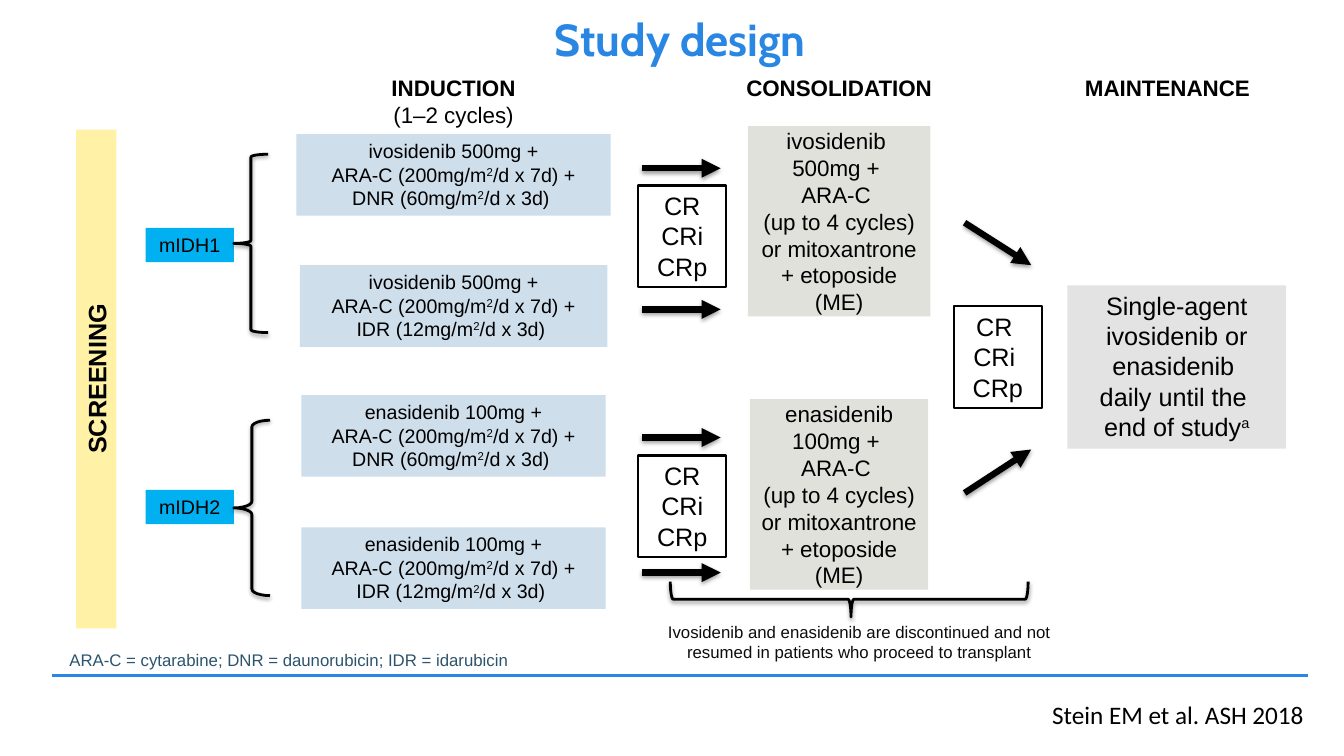
"""Build the study design flow slide."""
from lxml import etree
from pptx import Presentation
from pptx.dml.color import RGBColor
from pptx.enum.shapes import MSO_CONNECTOR, MSO_SHAPE
from pptx.enum.text import MSO_ANCHOR, MSO_AUTO_SIZE, PP_ALIGN
from pptx.oxml import parse_xml
from pptx.oxml.ns import nsdecls, qn
from pptx.util import Pt

RECTANGLE, BRACE = MSO_SHAPE.RECTANGLE, MSO_SHAPE.LEFT_BRACE
STRAIGHT = MSO_CONNECTOR.STRAIGHT
TOP, MIDDLE = MSO_ANCHOR.TOP, MSO_ANCHOR.MIDDLE
LEFT, CENTER = PP_ALIGN.LEFT, PP_ALIGN.CENTER
NO_AUTOFIT = MSO_AUTO_SIZE.NONE

THEME = {
    "blue": "2986E2", "black": "000000", "note": "0D0D0D", "slate": "2C546E",
    "induction": "CEDEEB", "consolidation": "E1E1DB", "maintenance": "E3E3E3",
    "screening": "FFF1A6", "mutation": "00B0F0",
    "title_size": 32, "large": 18, "heading_size": 16, "regimen_size": 14, "small": 12,
    "title_font": "Cabin", "body_font": "Arial", "citation_font": "Calibri",
}

TITLE = "Study design"
HEADINGS = [
    (324, 185, ["INDUCTION", "(1–2 cycles)"]),
    (599.4, 147.6, ["CONSOLIDATION"]),
    (834, 156.2, ["MAINTENANCE"]),
]
ARA_C = "ARA-C (200mg/m^2^/d x 7d) +"
DNR = "DNR (60mg/m^2^/d x 3d) "
IDR = "IDR (12mg/m^2^/d x 3d) "
INDUCTION = [
    (95.8, 224.6, ["ivosidenib 500mg +", ARA_C, DNR]),
    (189.4, 219.6, ["ivosidenib 500mg +", ARA_C, IDR]),
    (282.2, 217.4, ["enasidenib 100mg +", ARA_C, DNR]),
    (376.6, 217.4, ["enasidenib 100mg +", ARA_C, IDR]),
]
CONSOLIDATION = [
    (90, 130.3, ["ivosidenib ", "500mg + ", "ARA-C ", "(up to 4 cycles)",
                 "or mitoxantrone + etoposide (ME)"]),
    (285.1, 127.4, ["enasidenib 100mg + ", "ARA-C ",
                    "(up to 4 cycles) or mitoxantrone + etoposide (ME)"]),
]
MAINTENANCE = ["Single-agent ivosidenib or enasidenib ", "daily until the ", "end of study^a^"]
RESPONSES = [
    (455.8, 132.5, ["CR CRi CRp"]),
    (455.8, 325.4, ["CR CRi CRp"]),
    (681.2, 218.9, ["CR ", "CRi ", "CRp"]),
]
MUTATIONS = [(162.7, "mIDH1"), (349.9, "mIDH2")]
BRACES = [
    ((167, 110.2, 24.5, 127.4), (0.083, 0.5), 0),
    ((167, 300.2, 25.9, 125.3), (0.184, 0.5), 0),
    ((594, 300.2, 25.2, 255.6), (0.083, 0.505), 270),
]
RESPONSE_ARROW_ROWS = [120.2, 221, 312.5, 409]
MAINTENANCE_ARROWS = [(159.1, 189.4), (352.1, 321.1)]
TRANSPLANT_NOTE = ("Ivosidenib and enasidenib are discontinued and not "
                   "resumed in patients who proceed to transplant")
ABBREVIATIONS = "ARA-C = cytarabine; DNR = daunorubicin; IDR = idarubicin"
CITATION = "Stein EM et al. ASH 2018"


def color(name):
    """Return a theme colour."""
    return RGBColor.from_string(THEME[name])


def write(shape, lines, size, ink="black", font="body_font", bold=False,
          align=CENTER, anchor=TOP):
    """Write lines into a shape, with text between carets raised."""
    frame = shape.text_frame
    frame.word_wrap = True
    frame.auto_size = NO_AUTOFIT
    frame.vertical_anchor = anchor
    for index, line in enumerate(lines):
        paragraph = frame.add_paragraph() if index else frame.paragraphs[0]
        paragraph.alignment = align
        for part_index, part in enumerate(line.split("^")):
            if not part:
                continue
            run = paragraph.add_run()
            run.text = part
            run.font.size = Pt(THEME[size])
            run.font.name = THEME[font]
            run.font.bold = bold and index == 0
            run.font.color.rgb = color(ink)
            if part_index % 2:
                run.font._element.set("baseline", "30000")


def add_panel(slide, box, lines, size, fill=None, rotation=0, **text_format):
    """Add a filled or outlined rectangle holding text."""
    shape = slide.shapes.add_shape(RECTANGLE, *map(Pt, box))
    shape.shadow.inherit = False
    shape.rotation = rotation
    if fill:
        shape.fill.solid()
        shape.fill.fore_color.rgb = color(fill)
        shape.line.fill.background()
    else:
        shape.fill.background()
        shape.line.color.rgb = color("black")
        shape.line.width = Pt(1.5)
    write(shape, lines, size, **text_format)


def add_label(slide, box, lines, size, **text_format):
    """Add a text box."""
    write(slide.shapes.add_textbox(*map(Pt, box)), lines, size, **text_format)


def add_shadow(shape):
    """Give a shape a soft shadow below it."""
    properties = shape._element.spPr
    for effects in properties.findall(qn("a:effectLst")):
        properties.remove(effects)
    properties.append(parse_xml(
        f'<a:effectLst {nsdecls("a")}><a:outerShdw blurRad="{Pt(3.1)}" dist="{Pt(1.6)}" '
        'dir="5400000" rotWithShape="0"><a:srgbClr val="000000"><a:alpha val="38000"/>'
        '</a:srgbClr></a:outerShdw></a:effectLst>'))


def add_line(slide, ends, ink, width, arrow=False):
    """Add a straight rule or a shadowed arrow."""
    connector = slide.shapes.add_connector(STRAIGHT, *map(Pt, ends))
    connector.line.color.rgb = color(ink)
    connector.line.width = Pt(width)
    if arrow:
        etree.SubElement(connector.line._get_or_add_ln(), qn("a:tailEnd"), type="triangle")
        add_shadow(connector)
    else:
        etree.SubElement(connector._element.spPr, qn("a:effectLst"))


def add_brace(slide, box, adjustments, rotation):
    """Add a shadowed brace."""
    brace = slide.shapes.add_shape(BRACE, *map(Pt, box))
    brace.rotation = rotation
    for index, value in enumerate(adjustments):
        brace.adjustments[index] = value
    brace.fill.background()
    brace.line.color.rgb = color("black")
    brace.line.width = Pt(2)
    add_shadow(brace)


def main():
    """Compose and save the slide."""
    presentation = Presentation()
    presentation.slide_width, presentation.slide_height = Pt(960), Pt(540)
    slide = presentation.slides.add_slide(presentation.slide_layouts[5])
    add_line(slide, (37.4, 482.4, 934.6, 482.4), "blue", 2.25)

    title = slide.shapes.title
    title.left, title.top, title.width, title.height = map(Pt, (37.4, 5.8, 897.2, 43.2))
    write(title, [TITLE], "title_size", ink="blue", font="title_font", bold=True, anchor=MIDDLE)

    for center, width, lines in HEADINGS:
        box = (center - width / 2, 49.7, width, 26.6 if len(lines) == 1 else 46)
        add_label(slide, box, lines, "heading_size", bold=True)
    induction_center, consolidation_center = HEADINGS[0][0], HEADINGS[1][0]
    for top, width, lines in INDUCTION:
        box = (induction_center - width / 2, top, width, 58.3)
        add_panel(slide, box, lines, "regimen_size", "induction")
    for top, width, lines in CONSOLIDATION:
        box = (consolidation_center - width / 2, top, width, 136.1)
        add_panel(slide, box, lines, "heading_size", "consolidation", anchor=MIDDLE)
    add_panel(slide, (762.5, 203.8, 156.2, 116.6), MAINTENANCE, "large", "maintenance")
    add_panel(slide, (-109.4, 256.3, 356.4, 28.8), ["SCREENING"], "large", "screening",
              rotation=270, bold=True)

    for left, top, lines in RESPONSES:
        add_panel(slide, (left, top, 63, 72.7), lines, "large")
    for top, name in MUTATIONS:
        add_panel(slide, (104, top, 63, 24.5), [name], "regimen_size", "mutation")
    for brace in BRACES:
        add_brace(slide, *brace)
    for row in RESPONSE_ARROW_ROWS:
        add_line(slide, (458.6, row, 514.8, row), "black", 4.5, arrow=True)
    for start, end in MAINTENANCE_ARROWS:
        add_line(slide, (689, start, 736.6, end), "black", 4.5, arrow=True)

    add_label(slide, (459.4, 440.6, 308.9, 36), [TRANSPLANT_NOTE], "small", ink="note")
    add_label(slide, (42.5, 460.1, 396, 23), [ABBREVIATIONS], "small", ink="slate",
              align=LEFT, anchor=MIDDLE)
    add_label(slide, (744.5, 496.1, 195.1, 28.8), [CITATION], "large", font="citation_font",
              align=LEFT)
    presentation.save("out.pptx")


if __name__ == "__main__":
    main()
